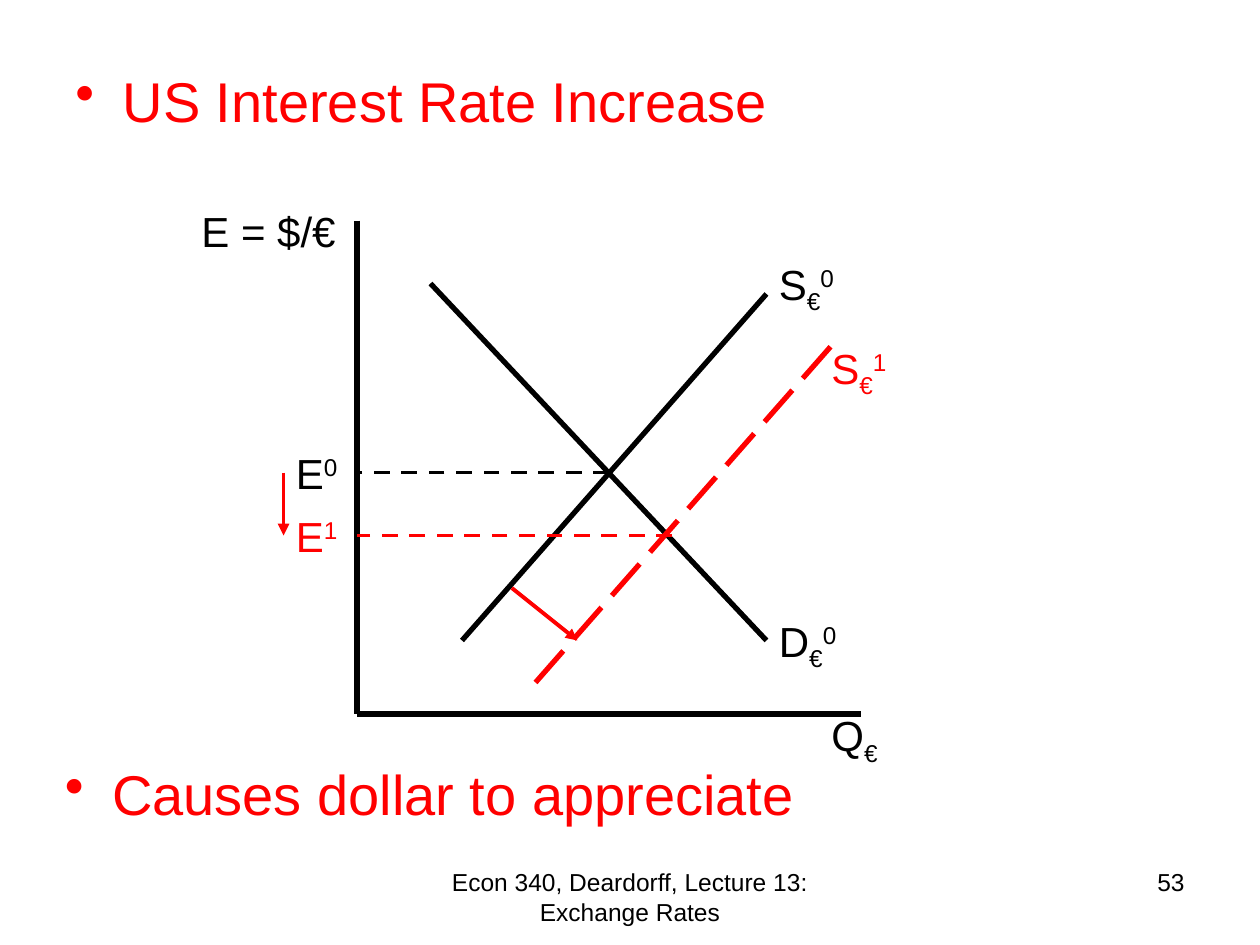
from dataclasses import dataclass

from lxml.etree import SubElement
from pptx import Presentation
from pptx.dml.color import RGBColor
from pptx.enum.dml import MSO_LINE_DASH_STYLE as Dash
from pptx.enum.shapes import MSO_CONNECTOR as Connector
from pptx.enum.text import PP_ALIGN as Align
from pptx.oxml.ns import qn
from pptx.slide import Slide
from pptx.util import Cm, Pt

COLORS = {"base": "000000", "change": "FF0000"}
SUB, SUPER = -25000, 30000


def grid(steps):
    """Length of a number of grid steps, twelve to the inch."""
    return Cm(2.54 * steps / 12)


@dataclass
class EconSlide:
    slide: Slide
    font: str = "Arial"

    def _text_box(self, left, top, width, height):
        box = self.slide.shapes.add_textbox(*map(grid, (left, top, width, height)))
        box.text_frame.word_wrap = True
        return box.text_frame.paragraphs[0]

    def _run(self, paragraph, text, size, color, baseline=0):
        run = paragraph.add_run()
        run.text = text
        run.font.size = Pt(size)
        run.font.name = self.font
        run.font.color.rgb = RGBColor.from_string(COLORS[color])
        if baseline:
            run.font._element.set("baseline", str(baseline))

    def _space_before(self, paragraph, percent):
        spacing = SubElement(paragraph._p.get_or_add_pPr(), qn("a:spcBef"))
        SubElement(spacing, qn("a:spcPct")).set("val", str(percent * 1000))

    def bullet(self, left, top, text):
        point = self._text_box(left, top, 108, 10)
        point.line_spacing = 0.8
        self._space_before(point, 20)
        props = point._p.get_or_add_pPr()
        props.set("marL", str(grid(4.5)))
        props.set("indent", str(-grid(4.5)))
        SubElement(props, qn("a:buChar")).set("char", "•")
        self._run(point, text, 32, "change")

    def label(self, left, top, width, name, sub="", sup="", color="base"):
        label = self._text_box(left, top, width, 6)
        self._space_before(label, 50)
        for text, baseline in ((name, 0), (sub, SUB), (sup, SUPER)):
            if text:
                self._run(label, text, 24, color, baseline)

    def footer(self, left, width, text, align):
        footer = self._text_box(left, 82, width, 6.25)
        footer.alignment = align
        self._run(footer, text, 14, "base")

    def line(self, start, end, color="base", weight=3, dash=None, arrow=False):
        line = self.slide.shapes.add_connector(
            Connector.STRAIGHT, *map(grid, (*start, *end)))
        line.line.color.rgb = RGBColor.from_string(COLORS[color])
        line.line.width = Pt(weight)
        if dash:
            line.line.dash_style = dash
        if arrow:
            SubElement(line.line._get_or_add_ln(), qn("a:tailEnd")).set("type", "triangle")
        SubElement(line._element.spPr, qn("a:effectLst"))


def main():
    deck = Presentation()
    deck.slide_width, deck.slide_height = Cm(25.4), Cm(19.05)
    market = EconSlide(deck.slides.add_slide(deck.slide_layouts[6]))

    # Footer and slide number
    market.footer(41, 38, "Econ 340, Deardorff, Lecture 13: Exchange Rates", Align.CENTER)
    market.footer(86, 28, "53", Align.RIGHT)

    # Cause
    market.bullet(6, 7, "US Interest Rate Increase")

    # Axes
    origin = (34, 68)
    market.line((34, 21), origin)
    market.line(origin, (82, 68))
    market.label(18, 19, 16, "E = $/€")
    market.label(78, 67, 8, "Q", "€")

    # Initial supply and demand
    market.line((44, 61), (73, 28))
    market.line((73, 61), (41, 27))
    market.label(73, 24, 9, "S", "€", "0")
    market.label(73, 58, 10, "D", "€", "0")

    # Exchange rates before and after
    for level, reach, state, color in ((45, 58, "0", "base"), (51, 64, "1", "change")):
        market.line((reach, level), (34, level), color, 2.25, Dash.DASH)
        market.label(27, level - 3, 16, "E", sup=state, color=color)

    # Shift arrows
    for start, end in (((48.75, 56), (55, 61)), ((27, 45), (27, 51))):
        market.line(start, end, "change", 2.25, arrow=True)

    # Effect
    market.bullet(5, 73, "Causes dollar to appreciate")

    # Shifted supply
    market.line((51, 65), (80, 32), "change", dash=Dash.LONG_DASH)
    market.label(78, 32, 9, "S", "€", "1", "change")

    deck.save("out.pptx")


if __name__ == "__main__":
    main()
